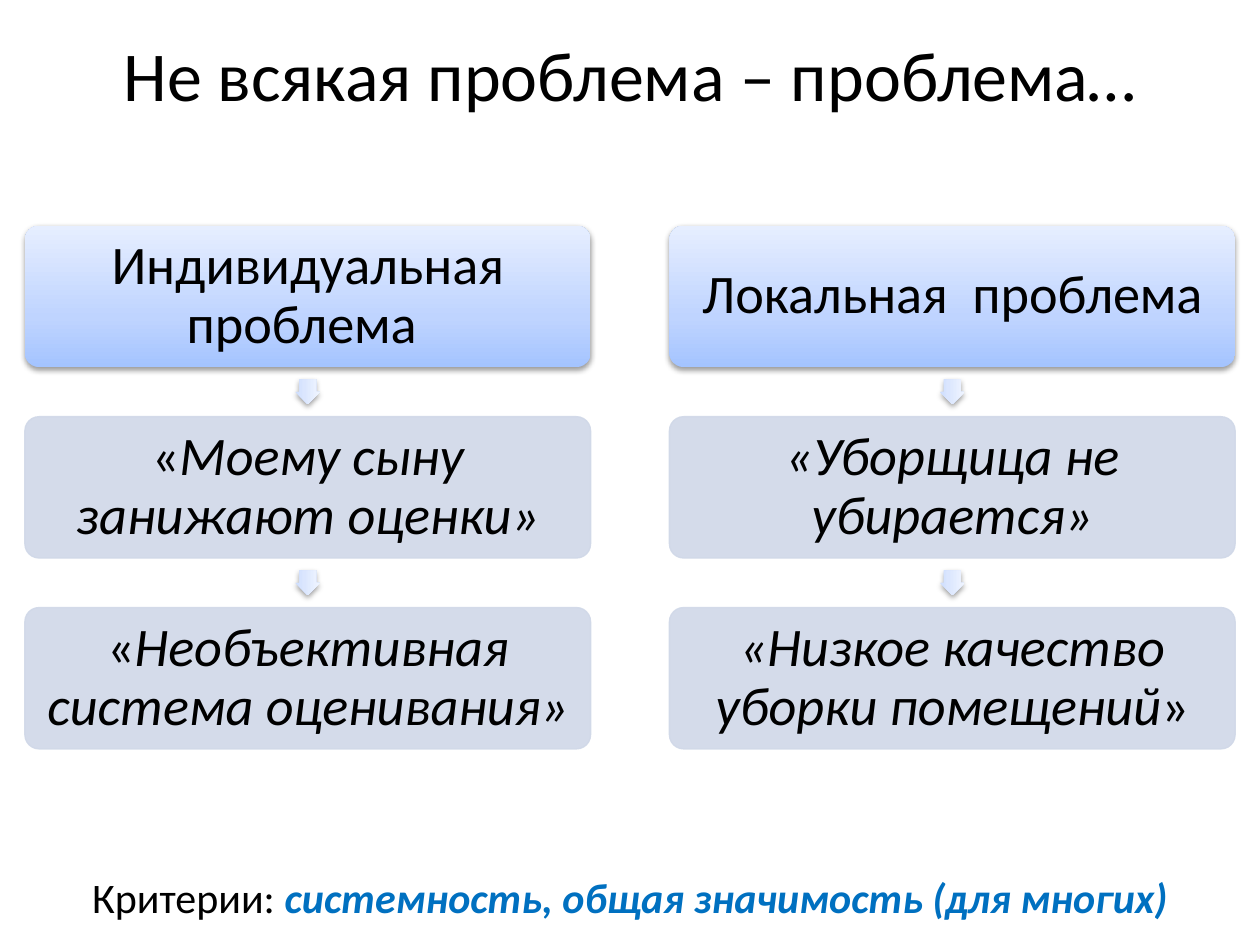
from pptx import Presentation
from pptx.dml.color import RGBColor
from pptx.enum.shapes import MSO_SHAPE as Preset
from pptx.enum.text import MSO_ANCHOR as Anchor, PP_ALIGN as Align
from pptx.oxml import parse_xml
from pptx.oxml.ns import qn
from pptx.util import Pt

NS = 'xmlns:a="http://schemas.openxmlformats.org/drawingml/2006/main"'
COLORS = {"text": "000000", "accent": "0070C0", "card": "D0D8E8"}
HEAD_STOPS = ["A4C4FF", "BFD4FF", "E6EEFF"]
ARROW_STOPS = ["CDDDFE", "DBE6FE", "F0F5FF"]
CARD_W, CARD_H = 323.3, 80.8
TOP, STEP, ARROW = 129, 109.1, 14.2

COLUMNS = [
    (14.2, [
        [("Индивидуальная проблема ", False)],
        [("«", False), ("Моему сыну занижают оценки»", True)],
        [("«", False), ("Необъективная система оценивания»", True)],
    ]),
    (382.5, [
        [("Локальная  проблема", False)],
        [("«Уборщица не убирается»", True)],
        [("«Низкое качество уборки помещений", True), ("»", False)],
    ]),
]


def add_span(para, text, size, color="text", bold=False, italic=False):
    span = para.add_run()
    span.text = text
    span.font.name = "Calibri"
    span.font.size = Pt(size)
    span.font.bold = bold
    span.font.italic = italic
    span.font.color.rgb = RGBColor.from_string(COLORS[color])


def shade(shape, stops):
    marks = "".join(
        f'<a:gs pos="{pos}"><a:srgbClr val="{color}"/></a:gs>'
        for pos, color in zip((0, 35000, 100000), stops)
    )
    properties = shape._element.spPr
    properties.insert(2, parse_xml(
        f'<a:gradFill {NS} rotWithShape="1"><a:gsLst>{marks}</a:gsLst>'
        '<a:lin ang="16200000" scaled="0"/></a:gradFill>'))
    shape.line.fill.background()
    properties.find(qn("a:effectLst")).append(parse_xml(
        f'<a:outerShdw {NS} blurRad="40000" dist="20000" dir="5400000" rotWithShape="0">'
        '<a:srgbClr val="000000"><a:alpha val="38000"/></a:srgbClr></a:outerShdw>'))


deck = Presentation()
deck.slide_width, deck.slide_height = Pt(720), Pt(540)
page = deck.slides.add_slide(deck.slide_layouts[5])

title = page.shapes.title
title.left, title.top, title.width, title.height = Pt(36), Pt(10), Pt(648), Pt(73)
title.text_frame.vertical_anchor = Anchor.MIDDLE
para = title.text_frame.paragraphs[0]
para.alignment = Align.CENTER
para.line_spacing = 0.8
add_span(para, "Не всякая проблема – проблема…", 40)

for left, cards in COLUMNS:
    for row, spans in enumerate(cards):
        top = TOP + row * STEP
        card = page.shapes.add_shape(
            Preset.ROUNDED_RECTANGLE, Pt(left), Pt(top), Pt(CARD_W), Pt(CARD_H))
        card.adjustments[0] = 0.1
        card.shadow.inherit = False
        if row == 0:
            shade(card, HEAD_STOPS)
        else:
            card.fill.solid()
            card.fill.fore_color.rgb = RGBColor.from_string(COLORS["card"])
            card.line.color.rgb = RGBColor.from_string(COLORS["card"])
            card.line.width = Pt(0.75)
            for color in card._element.spPr.iter(qn("a:srgbClr")):
                color.append(parse_xml(f'<a:alpha {NS} val="90000"/>'))

        frame = card.text_frame
        frame.word_wrap = True
        frame.vertical_anchor = Anchor.MIDDLE
        frame.margin_left = frame.margin_right = Pt(5.2)
        frame.margin_top = frame.margin_bottom = Pt(5.2)
        para = frame.paragraphs[0]
        para.alignment = Align.CENTER
        para.line_spacing = 0.9
        for text, italic in spans:
            add_span(para, text, 31, italic=italic)

        if row < len(cards) - 1:
            gap = STEP - CARD_H
            arrow = page.shapes.add_shape(
                Preset.RIGHT_ARROW, Pt(left + (CARD_W - ARROW) / 2),
                Pt(top + CARD_H + (gap - ARROW) / 2), Pt(ARROW), Pt(ARROW))
            arrow.rotation = 90
            arrow.adjustments[0] = 0.67
            arrow.shadow.inherit = False
            shade(arrow, ARROW_STOPS)

criteria = page.shapes.add_textbox(Pt(36), Pt(494.6), Pt(648), Pt(36))
criteria.text_frame.word_wrap = True
para = criteria.text_frame.paragraphs[0]
para.alignment = Align.CENTER
add_span(para, "Критерии: ", 24)
add_span(para, "системность, общая значимость (для многих)", 24, "accent", True, True)

deck.save("out.pptx")
